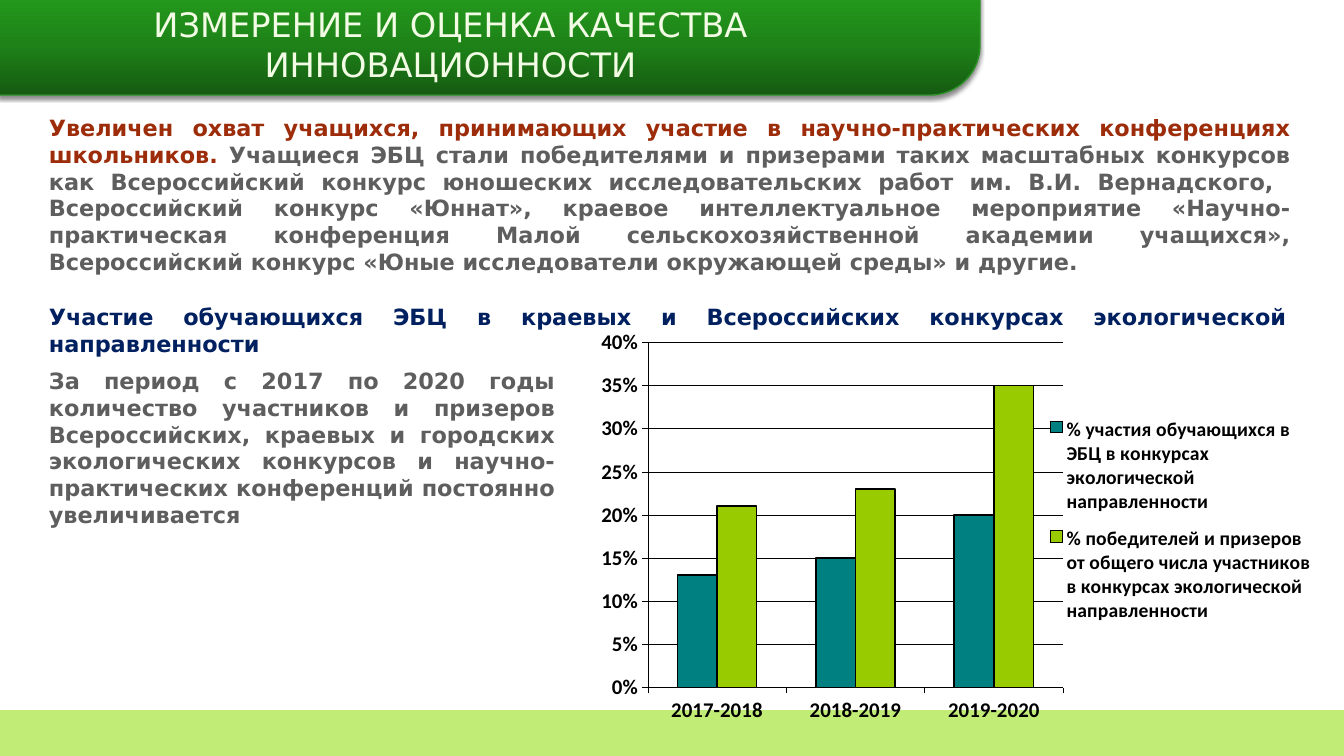
from lxml import etree
from pptx import Presentation
from pptx.chart.data import CategoryChartData
from pptx.dml.color import RGBColor
from pptx.enum.chart import XL_CHART_TYPE as ChartType, XL_LEGEND_POSITION as LegendSide
from pptx.enum.chart import XL_TICK_LABEL_POSITION as LabelSide, XL_TICK_MARK as Tick
from pptx.enum.shapes import MSO_SHAPE as Preset
from pptx.enum.text import PP_ALIGN as Align
from pptx.oxml import parse_xml
from pptx.oxml.ns import nsdecls
from pptx.util import Emu, Pt

EMU_PER_PX = 914400 / 100.8
COLORS = {
    "dark green": "155B11", "green": "1E8218", "light green": "239A1C", "banner edge": "2A9224",
    "footer": "C1EC76", "title": "F2FBE3", "title edge": "F0E2FD", "rust": "9D2D0A",
    "gray": "5E5E5E", "navy": "002060", "teal": "008080", "lime": "99CC00", "black": "000000",
}


def px(length):
    return Emu(round(length * EMU_PER_PX))


def rgb(name):
    return RGBColor.from_string(COLORS[name])


class SlideBuilder:
    font = "DejaVu Sans"
    chart_font = "Calibri"

    def __init__(self, slide):
        self.slide = slide

    def shape(self, preset, box, fill, edge, edge_width):
        shape = self.slide.shapes.add_shape(preset, *map(px, box))
        shape.shadow.inherit = False
        shape.fill.solid()
        shape.fill.fore_color.rgb = rgb(fill)
        shape.line.color.rgb = rgb(edge)
        shape.line.width = Pt(edge_width)
        return shape

    def banner(self, box, stops, edge):
        banner = self.shape(Preset.ROUND_1_RECTANGLE, box, stops[0], edge, 1)
        banner.adjustments[0] = 0.5
        banner.rotation = 180
        props = banner._element.spPr
        props.xfrm.set("flipH", "1")
        marks = "".join(
            f'<a:gs pos="{i * 50000}"><a:srgbClr val="{COLORS[stop]}"/></a:gs>'
            for i, stop in enumerate(stops))
        gradient = parse_xml(
            f'<a:gradFill {nsdecls("a")} rotWithShape="1"><a:gsLst>{marks}</a:gsLst>'
            '<a:lin ang="5400000" scaled="0"/></a:gradFill>')
        solid = props.find("{*}solidFill")
        props.replace(solid, gradient)
        props.find("{*}effectLst").append(parse_xml(
            f'<a:outerShdw {nsdecls("a")} blurRad="{Pt(3)}" dist="{Pt(2)}" dir="5400000" '
            f'rotWithShape="0"><a:srgbClr val="{COLORS["black"]}"><a:alpha val="45000"/>'
            '</a:srgbClr></a:outerShdw>'))

    def text(self, box, runs, size=16, bold=True, align=Align.JUSTIFY, edge=None):
        frame = self.slide.shapes.add_textbox(*map(px, box)).text_frame
        frame.word_wrap = True
        paragraph = frame.paragraphs[0]
        paragraph.alignment = align
        for words, color in runs:
            run = paragraph.add_run()
            run.text = words
            self.style(run.font, size, color, self.font, bold)
            if edge:
                run.font._element.insert(0, parse_xml(
                    f'<a:ln {nsdecls("a")} w="{Pt(0.75)}"><a:solidFill>'
                    f'<a:srgbClr val="{COLORS[edge]}"/></a:solidFill></a:ln>'))

    def style(self, font, size, color, name, bold=True):
        font.size, font.name, font.bold = Pt(size), name, bold
        font.color.rgb = rgb(color)

    def line(self, line, width):
        line.color.rgb = rgb("black")
        line.width = Pt(width)

    def layout(self, parent, after, fractions, inner=False):
        """Place a chart part by fractions of the chart's area."""
        for old in parent.findall("{*}layout"):
            parent.remove(old)
        target = '<c:layoutTarget val="inner"/>' if inner else ""
        modes = '<c:xMode val="edge"/><c:yMode val="edge"/>'
        sizes = "".join(f'<c:{key} val="{value}"/>' for key, value in zip("xywh", fractions))
        manual = parse_xml(f'<c:layout {nsdecls("c")}><c:manualLayout>{target}{modes}{sizes}'
                           '</c:manualLayout></c:layout>')
        if after is None:
            parent.insert(0, manual)
        else:
            after.addnext(manual)

    def columns(self, box, years, series):
        data = CategoryChartData(number_format="0%")
        data.categories = years
        for name, values, _ in series:
            data.add_series(name, values)
        chart = self.slide.shapes.add_chart(
            ChartType.COLUMN_CLUSTERED, *map(px, box), data).chart
        chart.has_title = False
        self.style(chart.font, 14.9, "black", self.chart_font)

        plot = chart.plots[0]
        plot.vary_by_categories = False
        plot.gap_width, plot.overlap = 150, 0
        for bars, (_, _, color) in zip(plot.series, series):
            bars.format.fill.solid()
            bars.format.fill.fore_color.rgb = rgb(color)
            self.line(bars.format.line, 1.25)

        for axis in (chart.category_axis, chart.value_axis):
            axis.major_tick_mark, axis.minor_tick_mark = Tick.OUTSIDE, Tick.NONE
            self.line(axis.format.line, 0.31)
            self.style(axis.tick_labels.font, 14.9, "black", self.chart_font)
        chart.category_axis.tick_label_position = LabelSide.LOW
        percent = chart.value_axis
        percent.minimum_scale, percent.maximum_scale, percent.major_unit = 0, 0.4, 0.05
        percent.tick_labels.number_format = "0%"
        percent.tick_labels.number_format_is_linked = False
        self.line(percent.major_gridlines.format.line, 0.31)

        chart.has_legend = True
        legend = chart.legend
        legend.position = LegendSide.RIGHT
        legend.include_in_layout = False
        self.style(legend.font, 14, "black", self.chart_font)
        key = legend._element
        self.layout(key, key.find("{*}legendPos"), (0.62, 0.2, 0.37, 0.53))
        self.layout(plot._element.getparent(), None, (0.075, 0.058, 0.569, 0.79), inner=True)


def main():
    deck = Presentation()
    deck.slide_width, deck.slide_height = px(1344), px(756)
    page = SlideBuilder(deck.slides.add_slide(deck.slide_layouts[6]))

    # Banner and footer
    page.banner((-2, -5, 982, 100), ("dark green", "green", "light green"), "banner edge")
    page.shape(Preset.RECTANGLE, (-2, 711, 1347, 45), "footer", "footer", 1.5)
    page.text((133, -1, 635, 92), [("ИЗМЕРЕНИЕ И ОЦЕНКА КАЧЕСТВА ИННОВАЦИОННОСТИ", "title")],
              size=24, bold=False, align=Align.CENTER, edge="title edge")

    # Achievements
    page.text((39, 109, 1262, 201), [
        ("Увеличен охват учащихся, принимающих участие в научно-практических конференциях "
         "школьников. ", "rust"),
        ("Учащиеся ЭБЦ стали победителями и призерами таких масштабных конкурсов как "
         "Всероссийский конкурс юношеских исследовательских работ им. В.И. Вернадского,  "
         "Всероссийский конкурс «Юннат», краевое интеллектуальное мероприятие "
         "«Научно-практическая конференция Малой сельскохозяйственной академии учащихся», "
         "Всероссийский конкурс «Юные исследователи окружающей среды» и другие.", "gray")])

    # Participation chart
    page.columns((593, 317, 730, 437), ("2017-2018", "2018-2019", "2019-2020"), (
        ("% участия обучающихся в ЭБЦ в конкурсах экологической направленности",
         (0.13, 0.15, 0.2), "teal"),
        ("% победителей и призеров от общего числа участников в конкурсах экологической "
         "направленности", (0.21, 0.23, 0.35), "lime")))

    # Participation heading and summary
    page.text((39, 362, 526, 173), [
        ("За период с 2017 по 2020 годы количество участников и призеров Всероссийских, "
         "краевых и городских экологических конкурсов и научно-практических конференций "
         "постоянно увеличивается", "gray")])
    page.text((39, 298, 1258, 85), [
        ("Участие обучающихся ЭБЦ в краевых и Всероссийских конкурсах экологической "
         "направленности", "navy")])

    deck.save("out.pptx")


if __name__ == "__main__":
    main()
